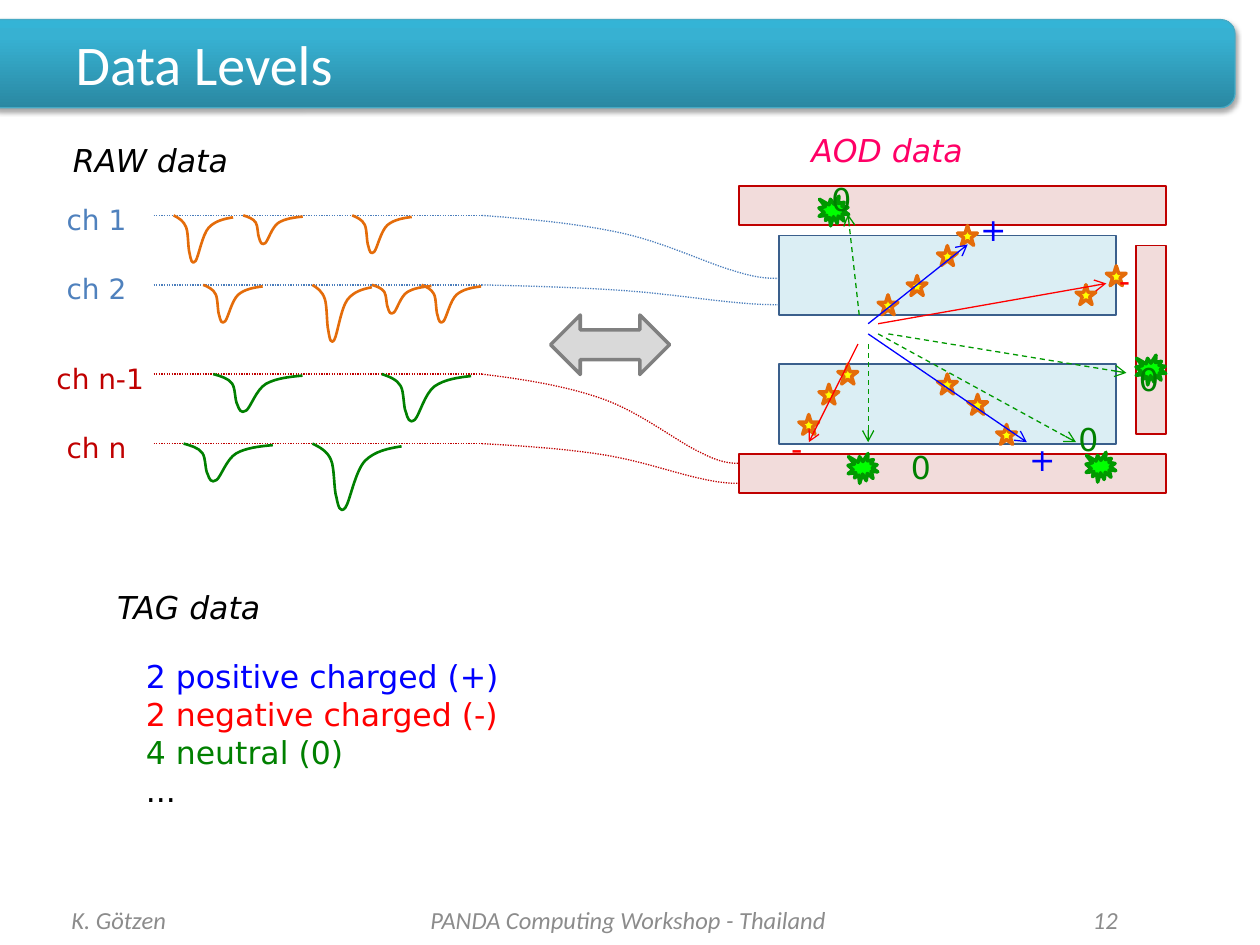
from copy import deepcopy
from dataclasses import dataclass

from lxml import etree
from pptx import Presentation, util as u
from pptx.dml.color import RGBColor
from pptx.enum import dml, shapes, text
from pptx.oxml import ns

Pt, Kind = u.Pt, shapes.MSO_SHAPE
Dash, Align = dml.MSO_LINE, text.PP_ALIGN
SANS, HEAD = "DejaVu Sans", "Calibri"
HUES = {
    "white": "FFFFFF", "black": "000000", "grey": "8C8C8C", "pink": "FF0066",
    "blue": "0000FF", "red": "FF0000", "green": "008000", "leaf": "009900",
    "lime": "00FF00", "yellow": "FFFF00", "orange": "E46C0A",
    "sky": "4F81BD", "steel": "4B7EBC", "navy": "3A5F8C", "ice": "DBEEF4",
    "brick": "C00000", "rose": "F2DCDB", "silver": "D9D9D9", "iron": "808080",
    "deep": "2A88A2", "teal": "37B1D2", "aqua": "34B4D6", "rim": "46AAC5",
}
# Bezier outlines in a unit box: a start point, then three points per curve
PULSE = [(0, 0), (.08, .05), (.17, .11), (.21, .24), (.25, .36), (.24, .67),
         (.27, .78), (.29, .91), (.31, 1.02), (.37, .93), (.42, .84), (.48, .4),
         (.59, .25), (.7, .11), (.85, .07), (1, .04)]
LEAD = [(0, 0), (.17, .06), (.34, .14), (.48, .29), (.62, .44), (.76, .76),
        (.85, .88), (.93, 1), (.97, 1), (1, 1)]


@dataclass
class Track:
    name: str
    left: float
    top: float
    tone: str
    wire: str
    trace: str
    span: float
    lead: tuple
    hits: list


@dataclass
class Label:
    words: str
    box: tuple
    hue: str
    size: int = 18
    slant: bool = False


@dataclass
class Ray:
    start: tuple
    end: tuple
    hue: str
    dash: bool = False


@dataclass
class Part:
    """One look shared by shapes in several boxes."""
    kind: int
    fill: str
    edge: str
    width: float
    boxes: list


TRACKS = [
    Track("ch 1", 31, 123.1, "sky", "steel", "orange", 34, (169.4, 36),
          [(99.2, 28), (139, 17), (201.3, 22.4)]),
    Track("ch 2", 31, 162.8, "sky", "steel", "orange", 34, (169.4, 11.3),
          [(116.1, 22.4), (178.5, 33.7), (212.5, 17), (240.9, 22.4)]),
    Track("ch n-1", 25.2, 213.8, "brick", "brick", "green", 51, (147.2, 51),
          [(121.9, 22.4), (218.2, 28)]),
    Track("ch n", 31, 253.5, "brick", "brick", "green", 51, (147.2, 22.7),
          [(104.9, 22.4), (178.5, 39.4)]),
]
STARS = [(501.8, 168.5), (518.4, 157.5), (535.7, 140.4), (547.2, 128.9),
         (535.7, 213.8), (553, 225.4), (569.5, 242.6), (478.8, 208.1),
         (468, 219.6), (456.5, 236.9), (614.9, 162.7), (632.2, 151.9)]
SEALS = [(468, 112.1), (620.6, 258.5), (484.6, 259.2), (649.2, 203)]
PARTS = [
    Part(Kind.RECTANGLE, "ice", "navy", 1,
         [(445, top, 192.8, 45.4) for top in (134.6, 208.2)]),
    Part(Kind.RECTANGLE, "rose", "brick", 1,
         [(422.3, 106.3, 244, 22.5), (422.3, 259.4, 244, 22.5),
          (649.2, 140.3, 17.1, 107.8)]),
    Part(Kind.STAR_5_POINT, "yellow", "orange", 2,
         [(*spot, 11.3, 11.3) for spot in STARS]),
    Part(Kind.EXPLOSION1, "lime", "leaf", 2,
         [(*spot, 17, 17) for spot in SEALS]),
    Part(Kind.LEFT_RIGHT_ARROW, "silver", "iron", 2, [(314.6, 180, 68, 34)]),
]
RAYS = [
    Ray((496.1, 185), (553, 139.7), "blue"),
    Ray((490.3, 196.6), (462.2, 252.7), "red"),
    Ray((501.8, 185), (632.2, 162), "red"),
    Ray((496.1, 190.8), (586.8, 252.7), "blue"),
    Ray((491, 180), (484.6, 122.4), "leaf", True),
    Ray((496.1, 196.6), (496.1, 252.7), "leaf", True),
    Ray((501.8, 190.8), (614.9, 252.7), "leaf", True),
    Ray((507.6, 190.8), (643.7, 213.1), "leaf", True),
]
SIGNS = {"+": ("blue", 29.5, [(553, 116.6), (581, 247.7)]),
         "-": ("red", 23, [(632.2, 145.4), (445, 241.9)]),
         "0": ("green", 26, [(468, 99.4), (643.7, 202.3),
                             (609.1, 236.2), (513.4, 252.7)])}
LABELS = [
    Label("RAW data", (34.6, 77, 104.4, 28.8), "black", slant=True),
    Label("TAG data", (59.8, 332.6, 98.6, 28.8), "black", slant=True),
    Label("AOD data", (456.5, 71.3, 101.5, 28.8), "pink", slant=True),
] + [Label(sign, (*spot, wide, 28.8), hue)
     for sign, (hue, wide, spots) in SIGNS.items() for spot in spots]
TAGS = [("2 positive charged (+)", "blue"), ("2 negative charged (-)", "red"),
        ("4 neutral (0)", "green"), ("...", "black")]
FOOT = [("K. Götzen", 33.8, 167.8, Align.LEFT),
        ("PANDA Computing Workshop - Thailand", 218.2, 281.5, Align.CENTER),
        ("12", 540, 105.8, Align.RIGHT)]


def tint(hue: str) -> RGBColor:
    return RGBColor.from_string(HUES[hue])


def pts(*nums: float) -> list:
    return [Pt(num) for num in nums]


def style(para, hue: str, size: float, face: str, slant: bool = False) -> None:
    font = para.font
    font.name, font.size, font.italic = face, Pt(size), slant
    font.color.rgb = tint(hue)


def stroke(line, hue: str, width: float, dash=None) -> None:
    line.color.rgb, line.width = tint(hue), Pt(width)
    if dash:
        line.dash_style = dash


def draw_part(slide, part: Part) -> None:
    for box in part.boxes:
        item = slide.shapes.add_shape(part.kind, *pts(*box))
        item.shadow.inherit = False
        item.fill.solid()
        item.fill.fore_color.rgb = tint(part.fill)
        stroke(item.line, part.edge, part.width)


def draw_curve(slide, form: list, box: tuple, hue: str, width: float, dash=None) -> None:
    """Stretch a unit outline to the box and join each three points to a Bezier."""
    left, top, wide, high = box
    dots = [pts(left + x * wide, top + y * high) for x, y in form]
    maker = slide.shapes.build_freeform(*dots[0])
    maker.add_line_segments(dots[1:], close=False)
    item = maker.convert_to_shape()
    route = item._element.spPr.find(".//" + ns.qn("a:path"))
    legs = route.findall(ns.qn("a:lnTo"))
    for i in range(0, len(legs), 3):
        bend = etree.SubElement(route, ns.qn("a:cubicBezTo"))
        for leg in legs[i:i + 3]:
            bend.append(leg[0])
            route.remove(leg)
    item.shadow.inherit = False
    item.fill.background()
    stroke(item.line, hue, width, dash)


def draw_line(slide, start: tuple, end: tuple, hue: str, dash=None):
    item = slide.shapes.add_connector(shapes.MSO_CONNECTOR.STRAIGHT, *pts(*start, *end))
    stroke(item.line, hue, .75, dash)
    etree.SubElement(item._element.spPr, ns.qn("a:effectLst"))
    return item


def draw_ray(slide, ray: Ray) -> None:
    item = draw_line(slide, ray.start, ray.end, ray.hue, Dash.DASH if ray.dash else None)
    edge = item._element.spPr.find(ns.qn("a:ln"))
    etree.SubElement(edge, ns.qn("a:tailEnd"), type="arrow")


def add_box(slide, box: tuple):
    frame = slide.shapes.add_textbox(*pts(*box)).text_frame
    frame.word_wrap = False
    frame.auto_size = text.MSO_AUTO_SIZE.SHAPE_TO_FIT_TEXT
    return frame


def draw_label(slide, label: Label) -> None:
    para = add_box(slide, label.box).paragraphs[0]
    para.text = label.words
    style(para, label.hue, label.size, SANS, label.slant)


def draw_track(slide, track: Track) -> None:
    draw_line(slide, (87.8, track.top), (275.3, track.top), track.wire, Dash.ROUND_DOT)
    wide = 72 if "-" in track.name else 49
    draw_label(slide, Label(track.name, (track.left, track.top - 11, wide, 26.6),
                            track.tone, 16))
    for left, deep in track.hits:
        draw_curve(slide, PULSE, (left, track.top, track.span, deep), track.trace, 1.5)
    draw_curve(slide, LEAD, (275.4, track.top, *track.lead), track.wire, .75,
               Dash.ROUND_DOT)


def draw_head(slide) -> None:
    bar = slide.shapes.add_shape(Kind.ROUNDED_RECTANGLE, *pts(-8.6, 11.2, 714.4, 50.4))
    bar.fill.gradient()
    bar.fill.gradient_angle = 90
    stops = bar._element.spPr.find(".//" + ns.qn("a:gsLst"))
    stops.append(deepcopy(stops[-1]))
    for stop, spot, hue in zip(bar.fill.gradient_stops, (0, .8, 1), ("deep", "teal", "aqua")):
        stop.position, stop.color.rgb = spot, tint(hue)
    stroke(bar.line, "rim", .75)
    bar.shadow.inherit = False
    glow = etree.SubElement(bar._element.spPr.find(ns.qn("a:effectLst")),
                            ns.qn("a:outerShdw"), blurRad=str(Pt(3.1)),
                            dist=str(Pt(1.8)), dir="5400000", rotWithShape="0")
    ink = etree.SubElement(glow, ns.qn("a:srgbClr"), val=HUES["black"])
    etree.SubElement(ink, ns.qn("a:alpha"), val="35000")
    slide.shapes._spTree.insert(2, bar._element)

    title = slide.shapes.title
    title.left, title.top, title.width, title.height = pts(36, 13, 648, 46)
    frame = title.text_frame
    frame.text, frame.vertical_anchor = "Data Levels", text.MSO_ANCHOR.MIDDLE
    frame.paragraphs[0].alignment = Align.LEFT
    style(frame.paragraphs[0], "white", 32, HEAD)


def draw_foot(slide) -> None:
    for words, left, wide, side in FOOT:
        frame = slide.shapes.add_textbox(*pts(left, 511.2, wide, 28.8)).text_frame
        frame.word_wrap, frame.vertical_anchor = True, text.MSO_ANCHOR.MIDDLE
        para = frame.paragraphs[0]
        para.text, para.alignment = words, side
        style(para, "grey", 14, HEAD, True)


def draw_tags(slide) -> None:
    frame = add_box(slide, (76.3, 372, 221, 94.3))
    frame.text = "\n".join(words for words, _ in TAGS)
    for para, (_, hue) in zip(frame.paragraphs, TAGS):
        style(para, hue, 18, SANS)


def main() -> None:
    deck = Presentation()
    deck.slide_width, deck.slide_height = pts(720, 540)
    slide = deck.slides.add_slide(deck.slide_layouts[5])
    draw_head(slide)
    draw_foot(slide)
    for draw, items in ((draw_part, PARTS), (draw_track, TRACKS),
                        (draw_ray, RAYS), (draw_label, LABELS)):
        for item in items:
            draw(slide, item)
    draw_tags(slide)
    deck.save("out.pptx")


if __name__ == "__main__":
    main()
